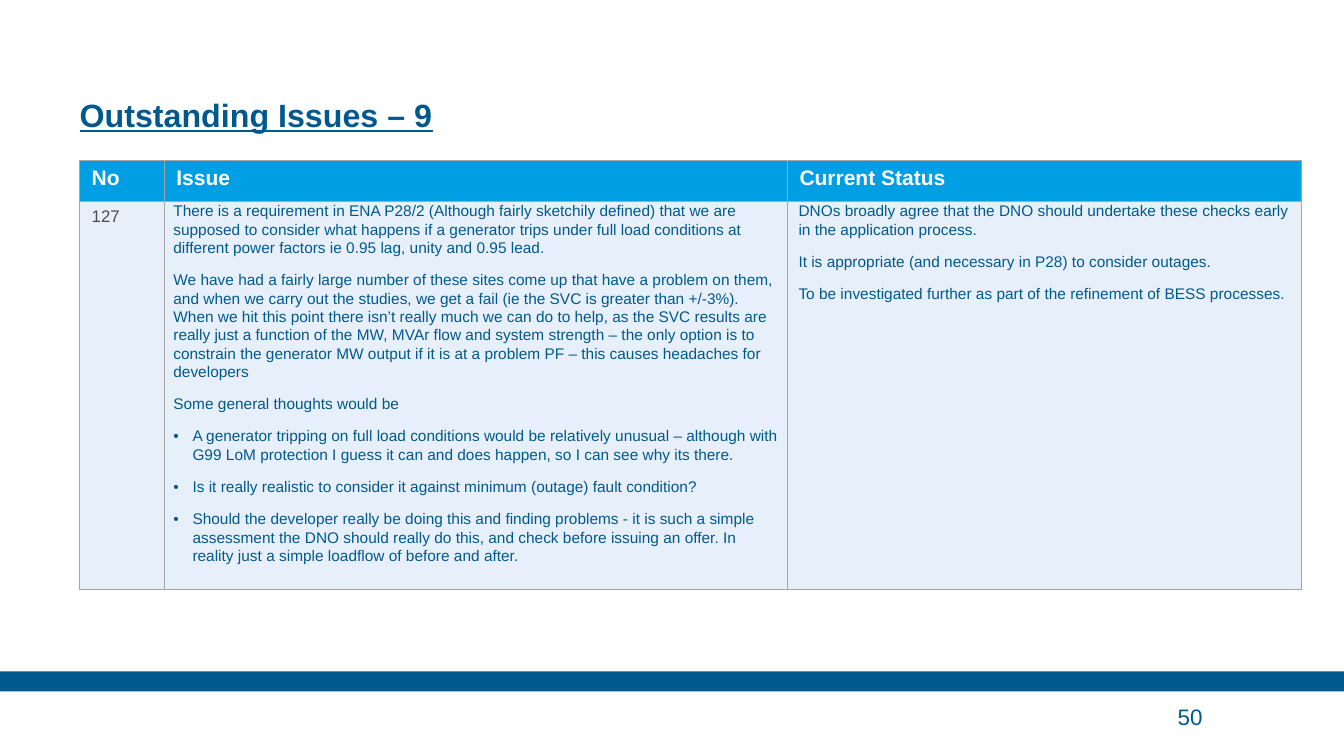
from dataclasses import dataclass

from lxml.etree import SubElement
from pptx import Presentation
from pptx.dml.color import RGBColor
from pptx.enum.shapes import MSO_SHAPE
from pptx.enum.text import MSO_ANCHOR
from pptx.oxml.ns import qn
from pptx.util import Inches, Pt

NAVY, SKY, PALE, WHITE, SLATE, GREY = "00598E", "009FE3", "E7F0FA", "FFFFFF", "484D51", "A6A6A6"


@dataclass
class Style:
    size: float
    color: str
    bold: bool = False
    underline: bool = False


@dataclass
class Item:
    text: str
    left: float
    bullet: bool = False


HEADING = Style(15, WHITE, bold=True)
NUMBER = Style(12, SLATE)
BODY = Style(11, NAVY)

ISSUE = [
    Item("There is a requirement in ENA P28/2 (Although fairly sketchily defined) that we are supposed "
         "to consider what happens if a generator trips under full load conditions at different power "
         "factors ie 0.95 lag, unity and 0.95 lead.", 0.02),
    Item("We have had a fairly large number of these sites come up that have a problem on them, and when "
         "we carry out the studies, we get a fail (ie the SVC is greater than +/-3%). When we hit this "
         "point there isn’t really much we can do to help, as the SVC results are really just a function "
         "of the MW, MVAr flow and system strength – the only option is to constrain the generator MW "
         "output if it is at a problem PF – this causes headaches for developers", 0.02),
    Item("Some general thoughts would be", 0.02),
    Item("A generator tripping on full load conditions would be relatively unusual – although with G99 "
         "LoM protection I guess it can and does happen, so I can see why its there.", 0.21, True),
    Item("Is it really realistic to consider it against minimum (outage) fault condition?", 0.21, True),
    Item("Should the developer really be doing this and finding problems - it is such a simple assessment "
         "the DNO should really do this, and check before issuing an offer. In reality just a simple "
         "loadflow of before and after.", 0.21, True),
]
STATUS = [
    Item("DNOs broadly agree that the DNO should undertake these checks early in the application "
         "process.", 0.04),
    Item("It is appropriate (and necessary in P28) to consider outages.", 0.04),
    Item("To be investigated further as part of the refinement of BESS processes.", 0.04),
]


def rgb(color: str) -> RGBColor:
    return RGBColor.from_string(color)


def style_para(para, style: Style) -> None:
    for span in para.runs:
        span.font.name = "Arial"
        span.font.size = Pt(style.size)
        span.font.bold = style.bold
        span.font.underline = style.underline
        span.font.color.rgb = rgb(style.color)


def add_text(page, area: tuple, text: str, style: Style, anchor):
    box = page.shapes.add_textbox(*map(Inches, area))
    frame = box.text_frame
    frame.word_wrap = True
    frame.margin_left = frame.margin_top = frame.margin_right = frame.margin_bottom = 0
    frame.vertical_anchor = anchor
    frame.text = text
    style_para(frame.paragraphs[0], style)
    return frame.paragraphs[0]


def finish_cell(cell, fill: str, side: float, edge: float) -> None:
    cell.margin_left = cell.margin_right = Inches(side)
    cell.margin_top = cell.margin_bottom = Inches(edge)
    properties = cell._tc.get_or_add_tcPr()
    for name in ("a:lnL", "a:lnR", "a:lnT", "a:lnB"):
        line = SubElement(properties, qn(name), w=str(Pt(1)))
        SubElement(SubElement(line, qn("a:solidFill")), qn("a:srgbClr"), val=GREY)
    cell.fill.solid()
    cell.fill.fore_color.rgb = rgb(fill)


def fill_label(cell, text: str, style: Style, fill: str) -> None:
    cell.text_frame.text = text
    style_para(cell.text_frame.paragraphs[0], style)
    finish_cell(cell, fill, 0.12, 0.06)


def fill_items(cell, items: list[Item]) -> None:
    frame = cell.text_frame
    for index, item in enumerate(items):
        para = frame.add_paragraph() if index else frame.paragraphs[0]
        para.text = item.text
        para.line_spacing = 1.07
        para.space_before = Pt(5 if index else 0)
        para.space_after = Pt(5)
        properties = para._p.get_or_add_pPr()
        properties.set("marL", str(Inches(item.left)))
        properties.set("indent", str(Inches(-0.19 if item.bullet else 0)))
        if item.bullet:
            SubElement(properties, qn("a:buFont"), typeface="Arial")
            SubElement(properties, qn("a:buChar"), char="•")
        style_para(para, BODY)
    finish_cell(cell, PALE, 0.07, 0)


def add_issue_table(page) -> None:
    table = page.shapes.add_table(2, 3, *map(Inches, (0.79, 1.59, 12.12, 4.26))).table
    for column, width in zip(table.columns, (0.84, 6.18, 5.1)):
        column.width = Inches(width)
    for row, height in zip(table.rows, (0.41, 3.85)):
        row.height = Inches(height)
    for index, heading in enumerate(("No", "Issue", "Current Status")):
        fill_label(table.cell(0, index), heading, HEADING, SKY)
    fill_label(table.cell(1, 0), "127", NUMBER, PALE)
    fill_items(table.cell(1, 1), ISSUE)
    fill_items(table.cell(1, 2), STATUS)


def main() -> None:
    deck = Presentation()
    deck.slide_width, deck.slide_height = Inches(13.33), Inches(7.5)
    page = deck.slides.add_slide(deck.slide_layouts[6])

    # Footer band and page number
    band = page.shapes.add_shape(MSO_SHAPE.RECTANGLE, 0, Inches(6.66), deck.slide_width, Inches(0.2))
    band.shadow.inherit = False
    band.fill.solid()
    band.fill.fore_color.rgb = rgb(NAVY)
    band.line.fill.background()
    add_text(page, (11.68, 6.91, 1.23, 0.39), "50", Style(16, NAVY), MSO_ANCHOR.MIDDLE)

    # Title
    title = add_text(page, (0.79, 0.31, 9.84, 1.02), "Outstanding Issues – 9",
                     Style(23, NAVY, bold=True, underline=True), MSO_ANCHOR.BOTTOM)
    title.line_spacing = Pt(30)

    # Issue table
    add_issue_table(page)
    deck.save("out.pptx")


if __name__ == "__main__":
    main()
